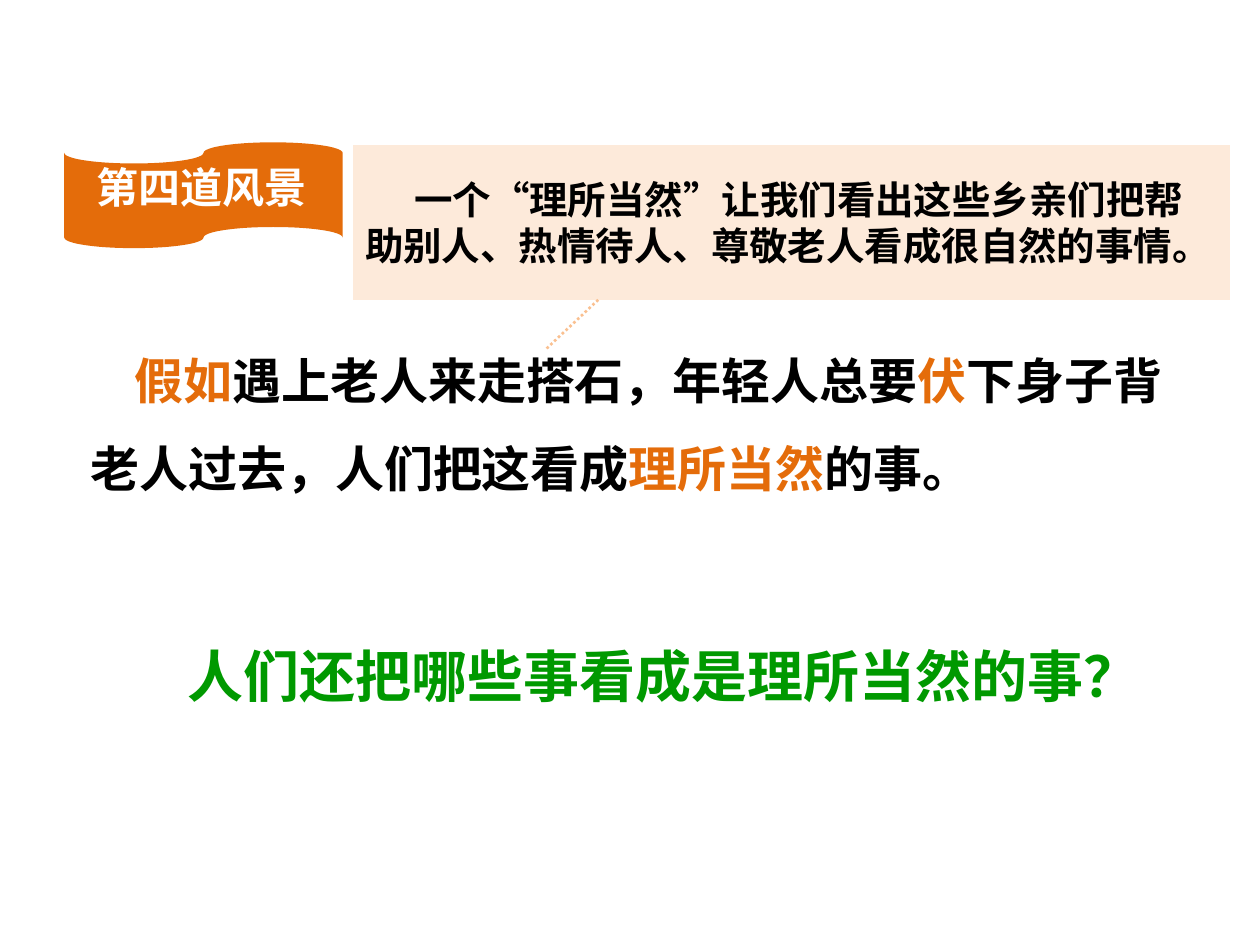
import pptx
import pptx.dml.color
import pptx.enum.dml
import pptx.enum.shapes
import pptx.enum.text
import pptx.oxml
import pptx.oxml.ns
import pptx.util
from pptx.util import Inches

SHAPE = pptx.enum.shapes.MSO_SHAPE
ALIGN = pptx.enum.text.PP_ALIGN
ANCHOR = pptx.enum.text.MSO_ANCHOR
AUTO = pptx.enum.text.MSO_AUTO_SIZE
ORANGE, BLACK, WHITE, GREEN = "E46C0A", "000000", "FFFFFF", "009900"


def rgb(code):
    return pptx.dml.color.RGBColor.from_string(code)


def set_all(obj, values):
    for name, value in values.items():
        setattr(obj, name, value)


class Deck:
    font = "Noto Sans CJK SC"

    def __init__(self, width, height):
        self.prs = pptx.Presentation()
        self.prs.slide_width, self.prs.slide_height = Inches(width), Inches(height)
        self.s = self.prs.slides.add_slide(self.prs.slide_layouts[6])

    def fill_text(self, sp, runs, size, font=None, frame=None, para=None, indent=0,
                  outline=None):
        """Fill a shape with one bold paragraph made of (text, colour) runs."""
        font = font or self.font
        tf = sp.text_frame
        set_all(tf, frame or {})
        p = tf.paragraphs[0]
        set_all(p, {"alignment": ALIGN.LEFT, **(para or {})})
        if indent:
            p._p.get_or_add_pPr().set("indent", str(Inches(indent)))
        for text, color in runs:
            r = p.add_run()
            r.text = text
            set_all(r.font, {"size": pptx.util.Pt(size), "bold": True, "name": font})
            r.font.color.rgb = rgb(color)
            rPr = r._r.get_or_add_rPr()
            ea = pptx.oxml.parse_xml(f'<a:ea {pptx.oxml.ns.nsdecls("a")} typeface="{font}"/>')
            rPr.find(pptx.oxml.ns.qn("a:latin")).addnext(ea)
            if outline:
                rPr.insert(0, pptx.oxml.parse_xml(
                    f'<a:ln {pptx.oxml.ns.nsdecls("a")} w="9525"><a:solidFill>'
                    f'<a:srgbClr val="{outline}"/></a:solidFill></a:ln>'))

    def text(self, box, runs, size, wrap=True, parent=None, **options):
        sp = (parent or self.s).shapes.add_textbox(*map(Inches, box))
        frame = {"word_wrap": wrap, "auto_size": AUTO.SHAPE_TO_FIT_TEXT}
        self.fill_text(sp, runs, size, frame=frame, **options)

    def shape(self, kind, box, fill, parent=None):
        sp = (parent or self.s).shapes.add_shape(kind, *map(Inches, box))
        sp.shadow.inherit = False
        sp.fill.solid()
        sp.fill.fore_color.rgb = rgb(fill)
        sp.line.fill.background()
        return sp

    def callout(self, box, fill, line, pointer, runs, size, indent):
        sp = self.shape(SHAPE.LINE_CALLOUT_1_NO_BORDER, box, fill)
        for i, value in enumerate(pointer):
            sp.adjustments[i] = value
        sp.line.color.rgb = rgb(line)
        set_all(sp.line, {"width": pptx.util.Pt(1.5),
                          "dash_style": pptx.enum.dml.MSO_LINE.ROUND_DOT})
        frame = {"word_wrap": True, "vertical_anchor": ANCHOR.MIDDLE}
        self.fill_text(sp, runs, size, frame=frame, indent=indent)

    def banner(self, box, text_box, text):
        group = self.s.shapes.add_group_shape()
        self.shape(SHAPE.FLOWCHART_PUNCHED_TAPE, box, ORANGE, group)
        self.text(text_box, [(text, WHITE)], 24, wrap=False, parent=group,
                  para={"alignment": ALIGN.CENTER})


def main():
    deck = Deck(10, 7.5)
    passage = [("假如", ORANGE), ("遇上老人来走搭石，年轻人总要", BLACK), ("伏", ORANGE),
               ("下身子背老人过去，人们把这看成", BLACK), ("理所当然", ORANGE), ("的事。", BLACK)]
    deck.text((0.62, 2.5, 8.81, 1.51), passage, 28, para={"line_spacing": 1.5}, indent=0.35)
    deck.banner((0.51, 1.13, 2.21, 0.84), (0.59, 1.23, 2.02, 0.61), "第四道风景")
    comment = "一个“理所当然”让我们看出这些乡亲们把帮助别人、热情待人、尊敬老人看成很自然的事情。"
    deck.callout((2.8, 1.15, 6.96, 1.23), "FDEADA", "FAC090", (1, 0.28, 1.32, 0.22),
                 [(comment, BLACK)], 22, indent=0.39)
    deck.text((1.39, 5.04, 7.83, 0.64), [("人们还把哪些事看成是理所当然的事？", GREEN)], 32,
              wrap=False, font="Noto Sans CJK JP", outline=WHITE)
    deck.prs.save("out.pptx")


if __name__ == "__main__":
    main()
